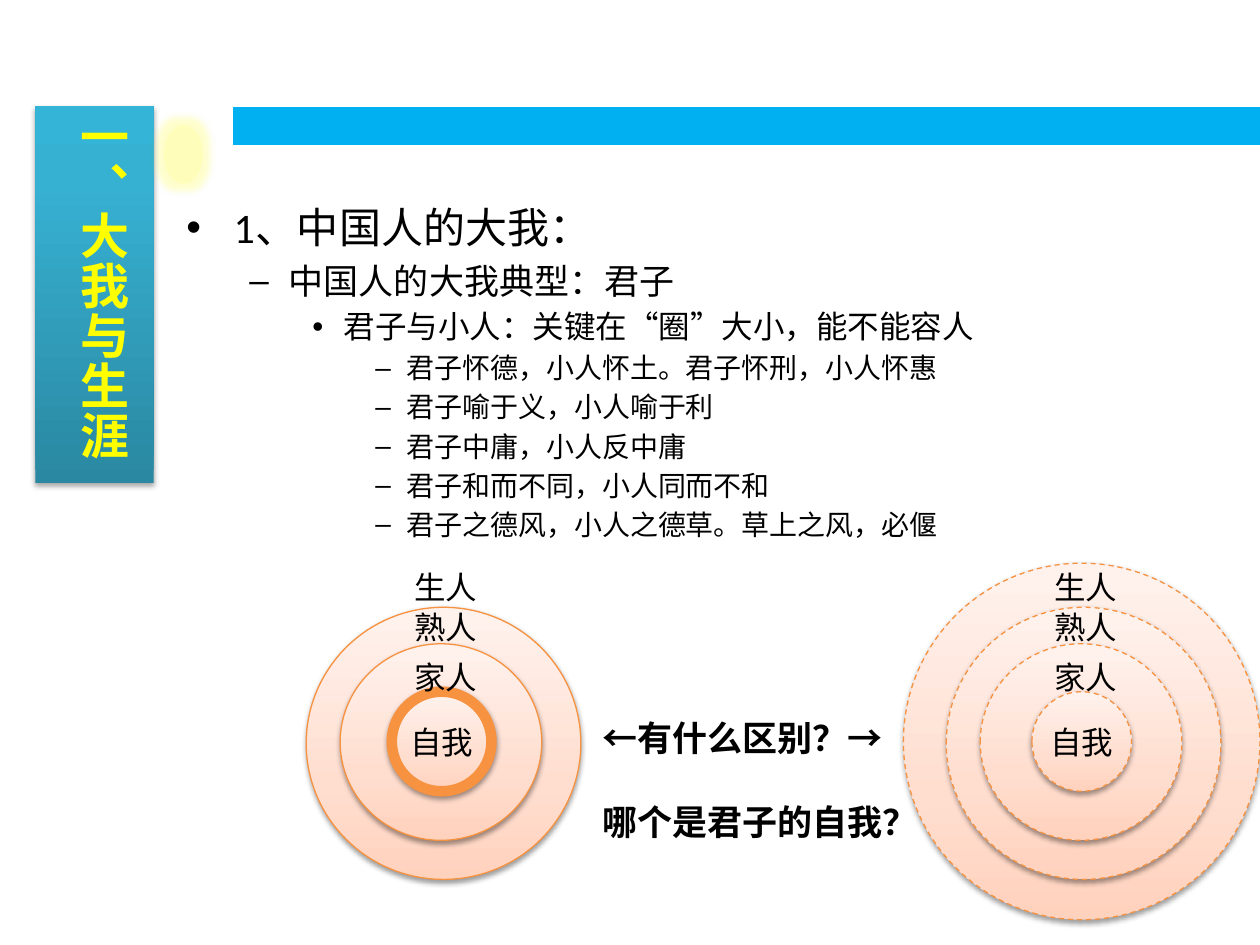
import pptx
import pptx.dml.color
import pptx.enum.dml
import pptx.enum.shapes
import pptx.enum.text
import pptx.oxml
import pptx.oxml.ns
import pptx.util
from pptx.util import Inches

COLORS = {"bar": "00B0F0", "glow": "FFFF00", "ring": "F69240", "text": "000000",
          "title": "FFFF00", "title_edge": "E78738", "shadow": "000000"}
RING_STOPS = [(0, "FFD2BD"), (35, "FFDED0"), (100, "FFF2ED")]
TITLE_STOPS = [(0, "2A88A2"), (80, "37B1D2"), (100, "34B4D6")]
RINGS = [(0, 0, 2.83, 2.83), (0.34, 0.35, 2.18, 2.16),
         (0.61, 0.64, 1.6, 1.56), (1.02, 1.02, 0.79, 0.79)]
CIRCLE_LABELS = [("家人", 0.7), ("熟人", 0.31), ("生人", -0.01)]
OUTLINE = [
    (0, "1、中国人的大我："),
    (1, "中国人的大我典型：君子"),
    (2, "君子与小人：关键在“圈”大小，能不能容人"),
    (3, "君子怀德，小人怀土。君子怀刑，小人怀惠"),
    (3, "君子喻于义，小人喻于利"),
    (3, "君子中庸，小人反中庸"),
    (3, "君子和而不同，小人同而不和"),
    (3, "君子之德风，小人之德草。草上之风，必偃"),
]
LEVEL_SIZES = [24, 20, 18, 16]
SHAPES = pptx.enum.shapes.MSO_SHAPE
ALIGN = pptx.enum.text.PP_ALIGN
ANCHOR = pptx.enum.text.MSO_ANCHOR
FIT_SHAPE = pptx.enum.text.MSO_AUTO_SIZE.SHAPE_TO_FIT_TEXT


def rgb(name):
    """Return the named colour."""
    return pptx.dml.color.RGBColor.from_string(COLORS[name])


def element(xml):
    """Parse one DrawingML element written with the a: prefix."""
    head, mark, tail = xml.partition(" ")
    return pptx.oxml.parse_xml(f"{head} {pptx.oxml.ns.nsdecls('a')}{mark}{tail}")


def color_xml(value, alpha=100):
    """Return the XML of a colour with its opacity in percent."""
    return f'<a:srgbClr val="{value}"><a:alpha val="{alpha * 1000}"/></a:srgbClr>'


def shadow_xml(alpha, blur, distance):
    """Return the XML of a downward shadow, lengths in points."""
    return (f'<a:outerShdw blurRad="{round(blur * 12700)}" dist="{round(distance * 12700)}" '
            f'dir="5400000" rotWithShape="0">{color_xml(COLORS["shadow"], alpha)}</a:outerShdw>')


def set_effect(shape, xml):
    """Replace the inherited effects of a shape with one effect."""
    shape.shadow.inherit = False
    shape._element.spPr.find(pptx.oxml.ns.qn("a:effectLst")).append(element(xml))


def set_gradient(shape, stops):
    """Fill a shape with a gradient running from bottom to top."""
    shape.fill.gradient()
    shape.fill.gradient_angle = 90
    stop_list = next(shape._element.spPr.iter(pptx.oxml.ns.qn("a:gsLst")))
    for stop in list(stop_list):
        stop_list.remove(stop)
    for position, value in stops:
        stop_list.append(element(f'<a:gs pos="{position * 1000}">{color_xml(value)}</a:gs>'))


def write(paragraph, text, size, color="text", font="Calibri", bold=False):
    """Set the text of a paragraph and its font."""
    paragraph.text = text
    paragraph.font.size = pptx.util.Pt(size)
    paragraph.font.name = font
    paragraph.font.bold = bold
    paragraph.font.color.rgb = rgb(color)


def place(shape, left, top, width, height):
    """Move a placeholder to a box given in inches."""
    shape.left, shape.top = Inches(left), Inches(top)
    shape.width, shape.height = Inches(width), Inches(height)


def narrow_frame(shape):
    """Centre the text vertically and drop the side insets."""
    frame = shape.text_frame
    frame.margin_left = frame.margin_right = 0
    frame.vertical_anchor = ANCHOR.MIDDLE
    return frame


def add_header(slide, left, top, width, height):
    """Draw the header bar and the soft yellow spot beside it."""
    bar = slide.shapes.add_shape(SHAPES.RECTANGLE, Inches(left), Inches(top),
                                 Inches(width), Inches(height))
    bar.fill.solid()
    bar.fill.fore_color.rgb = rgb("bar")
    bar.shadow.inherit = False
    spot = slide.shapes.add_shape(SHAPES.OVAL, Inches(left - 0.55), Inches(top + 0.14),
                                  Inches(0.31), Inches(0.47))
    spot.fill.solid()
    spot.fill.fore_color.rgb = rgb("glow")
    fill_color = next(spot._element.spPr.iter(pptx.oxml.ns.qn("a:srgbClr")))
    fill_color.append(element('<a:alpha val="9000"/>'))
    set_effect(spot, f'<a:glow rad="101600">{color_xml(COLORS["glow"], 20)}</a:glow>')
    for shape in (bar, spot):
        shape.line.fill.background()


def add_title(slide, left, top, width, height):
    """Set the vertical title in its gradient panel."""
    title = slide.shapes.title
    place(title, left, top, width, height)
    set_gradient(title, TITLE_STOPS)
    set_effect(title, shadow_xml(35, 3.1, 1.8))
    frame = narrow_frame(title)
    frame._txBody.bodyPr.set("vert", "eaVert")
    heading = frame.paragraphs[0]
    write(heading, "一、大我与生涯", 28, "title", "Noto Sans CJK SC", True)
    heading.alignment = ALIGN.LEFT
    heading.line_spacing = pptx.util.Pt(24)
    run_style = heading.runs[0]._r.get_or_add_rPr()
    run_style.set("spc", "50")
    run_style.append(element(f'<a:ln w="12700"><a:solidFill>{color_xml(COLORS["title_edge"])}'
                             '</a:solidFill></a:ln>'))
    run_style.append(element(f'<a:effectLst >{shadow_xml(40, 3, 2)}</a:effectLst>'))
    run_style.append(element('<a:ea typeface="Noto Sans CJK SC"/>'))


def add_outline(slide, left, top, width, height):
    """Fill the body placeholder with the nested list."""
    body = slide.placeholders[1]
    place(body, left, top, width, height)
    frame = body.text_frame
    for index, (level, text) in enumerate(OUTLINE):
        item = frame.add_paragraph() if index else frame.paragraphs[0]
        item.level = level
        write(item, text, LEVEL_SIZES[level])


def add_circles(slide, left, top, rings, core_width, dashed):
    """Draw concentric circles of relations around the self."""
    group = slide.shapes.add_group_shape()
    for x, y, width, height in rings:
        ring = group.shapes.add_shape(SHAPES.OVAL, Inches(left + x), Inches(top + y),
                                      Inches(width), Inches(height))
        set_gradient(ring, RING_STOPS)
        ring.line.color.rgb = rgb("ring")
        ring.line.width = pptx.util.Pt(0.75)
        if dashed:
            ring.line.dash_style = pptx.enum.dml.MSO_LINE.DASH
        set_effect(ring, shadow_xml(38, 3.1, 1.6))
    ring.line.width = pptx.util.Pt(core_width)
    core = narrow_frame(ring).paragraphs[0]
    write(core, "自我", 18)
    core.alignment = ALIGN.CENTER
    for text, y in CIRCLE_LABELS:
        label = group.shapes.add_textbox(Inches(left + 1.1), Inches(top + y),
                                         Inches(0.87), Inches(0.4))
        label.text_frame.word_wrap = True
        label.text_frame.auto_size = FIT_SHAPE
        write(label.text_frame.paragraphs[0], text, 18)


def add_questions(slide, left, top, width, height):
    """Place the two questions between the circles."""
    questions = slide.shapes.add_textbox(Inches(left), Inches(top), Inches(width), Inches(height))
    frame = questions.text_frame
    frame.word_wrap = False
    frame.auto_size = FIT_SHAPE
    write(frame.paragraphs[0], "←有什么区别？→", 20, bold=True)
    choice = frame.add_paragraph()
    write(choice, "哪个是君子的自我？", 20, bold=True)
    choice.alignment = ALIGN.CENTER
    choice.space_before = pptx.util.Pt(24)


def main():
    """Build the slide and save it."""
    deck = pptx.Presentation()
    deck.slide_width, deck.slide_height = Inches(10), Inches(7.5)
    slide = deck.slides.add_slide(deck.slide_layouts[1])
    add_header(slide, 1.85, 0.85, 8.15, 0.3)
    add_outline(slide, 1.38, 1.55, 8.12, 5.15)
    add_circles(slide, 2.09, 4.47, RINGS[1:], 6, False)
    add_circles(slide, 7.17, 4.47, RINGS, 0.75, True)
    add_questions(slide, 4.68, 5.64, 2.77, 1.11)
    add_title(slide, 0.28, 0.84, 0.94, 2.99)
    deck.save("out.pptx")


if __name__ == "__main__":
    main()
